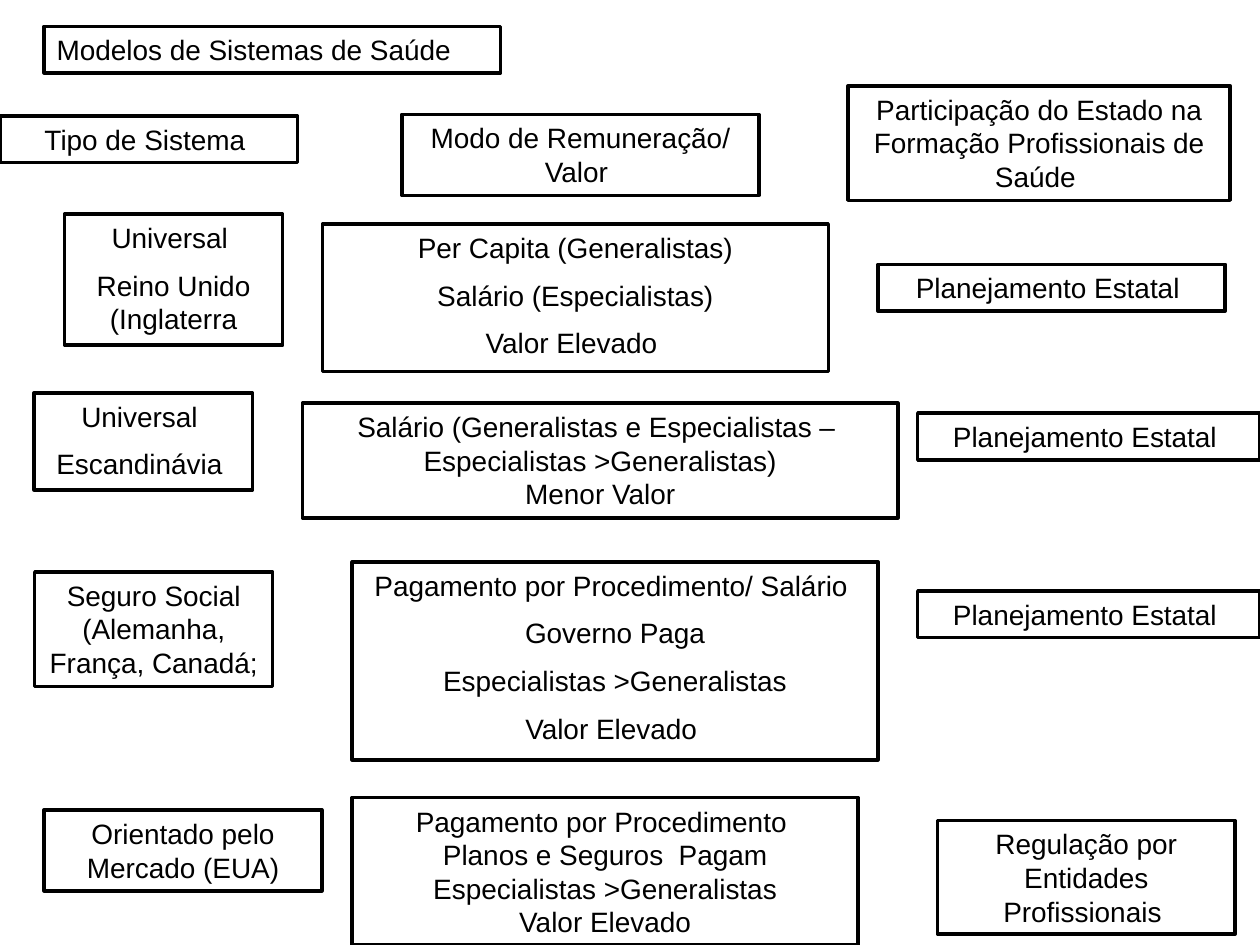
from pptx import Presentation
from pptx.dml.color import RGBColor
from pptx.enum.text import MSO_ANCHOR as Anchor, MSO_AUTO_SIZE as AutoSize, PP_ALIGN as Align
from pptx.util import Cm, Pt

BLACK, WHITE = "000000", "FFFFFF"
ONE_LINE, TWO_LINES, THREE_LINES = 0.94, 1.63, 2.31
STATE_PLANNING = ["Planejamento Estatal "]

# Each box: left, top, width, height (cm), paragraphs
HEADINGS = [
    (0, 2.34, 6, ONE_LINE, ["Tipo de Sistema "]),
    (8.1, 2.31, 7.2, TWO_LINES, ["Modo de Remuneração/ Valor "]),
    (17.1, 1.73, 7.7, THREE_LINES,
     ["Participação do Estado na Formação Profissionais de Saúde "]),
]
SYSTEM_TYPES = [
    (1.3, 4.32, 4.4, 2.64, ["Universal ", "Reino Unido (Inglaterra"]),
    (0.69, 7.92, 4.4, 1.96, ["Universal ", "Escandinávia "]),
    (0.7, 11.53, 4.8, THREE_LINES, ["Seguro Social (Alemanha, França, Canadá;"]),
    (0.89, 16.33, 5.6, TWO_LINES, ["Orientado pelo Mercado (EUA)"]),
]
SPACED_PAYMENTS = [
    (6.5, 4.52, 10.2, 2.97,
     ["Per Capita (Generalistas)", "Salário (Especialistas)", "Valor Elevado "]),
    (7.1, 11.33, 10.6, 3.99,
     ["Pagamento por Procedimento/ Salário ", "Governo Paga",
      "Especialistas >Generalistas", "Valor Elevado "]),
]
COMPACT_PAYMENTS = [
    (6.1, 8.13, 12, THREE_LINES,
     ["Salário (Generalistas e Especialistas – ", "Especialistas >Generalistas)",
      "Menor Valor"]),
    (7.1, 16.08, 10.2, 2.97,
     ["Pagamento por Procedimento ", "Planos e Seguros  Pagam",
      "Especialistas >Generalistas", "Valor Elevado"]),
]
STATE_ROLES = [
    (17.7, 5.33, 7, ONE_LINE, STATE_PLANNING),
    (18.5, 8.33, 6.9, ONE_LINE, STATE_PLANNING),
    (18.5, 11.91, 6.9, ONE_LINE, STATE_PLANNING),
    (18.9, 16.54, 6, 2.29, ["Regulação por Entidades Profissionais "]),
]


def rgb(value):
    return RGBColor.from_string(value)


def write_text(frame, paragraphs, *, size=16, font="Arial", color=BLACK,
               align=Align.CENTER, gap=8):
    """Fill a text frame; gap is the space in points between paragraphs."""
    frame.word_wrap = True
    frame.auto_size = AutoSize.NONE
    frame.vertical_anchor = Anchor.TOP
    frame.margin_left = frame.margin_right = Cm(0.25)
    frame.margin_top = frame.margin_bottom = Cm(0.13)
    for index, text in enumerate(paragraphs):
        line = frame.add_paragraph() if index else frame.paragraphs[0]
        line.alignment = align
        line.space_before = Pt(gap if index else 0)
        run = line.add_run()
        run.text = text
        run.font.size = Pt(size)
        run.font.name = font
        run.font.color.rgb = rgb(color)


def outline(box):
    box.fill.solid()
    box.fill.fore_color.rgb = rgb(WHITE)
    box.line.color.rgb = rgb(BLACK)
    box.line.width = Pt(2)


def add_title(slide, text):
    title = slide.shapes.title
    title.left, title.top, title.width, title.height = map(
        Cm, (0.89, 0.53, 9.2, ONE_LINE))
    outline(title)
    write_text(title.text_frame, [text], align=Align.LEFT)


def add_boxes(slide, boxes, **text_format):
    for *place, paragraphs in boxes:
        box = slide.shapes.add_textbox(*map(Cm, place))
        outline(box)
        write_text(box.text_frame, paragraphs, **text_format)


def main():
    deck = Presentation()
    deck.slide_width, deck.slide_height = Cm(25.4), Cm(19.05)
    slide = deck.slides.add_slide(deck.slide_layouts[5])

    # Title and column headings
    add_title(slide, "Modelos de Sistemas de Saúde")
    add_boxes(slide, HEADINGS)

    # Columns: system type, payment, role of the state
    add_boxes(slide, SYSTEM_TYPES)
    add_boxes(slide, SPACED_PAYMENTS)
    add_boxes(slide, COMPACT_PAYMENTS, gap=0)
    add_boxes(slide, STATE_ROLES)

    deck.save("out.pptx")


if __name__ == "__main__":
    main()
